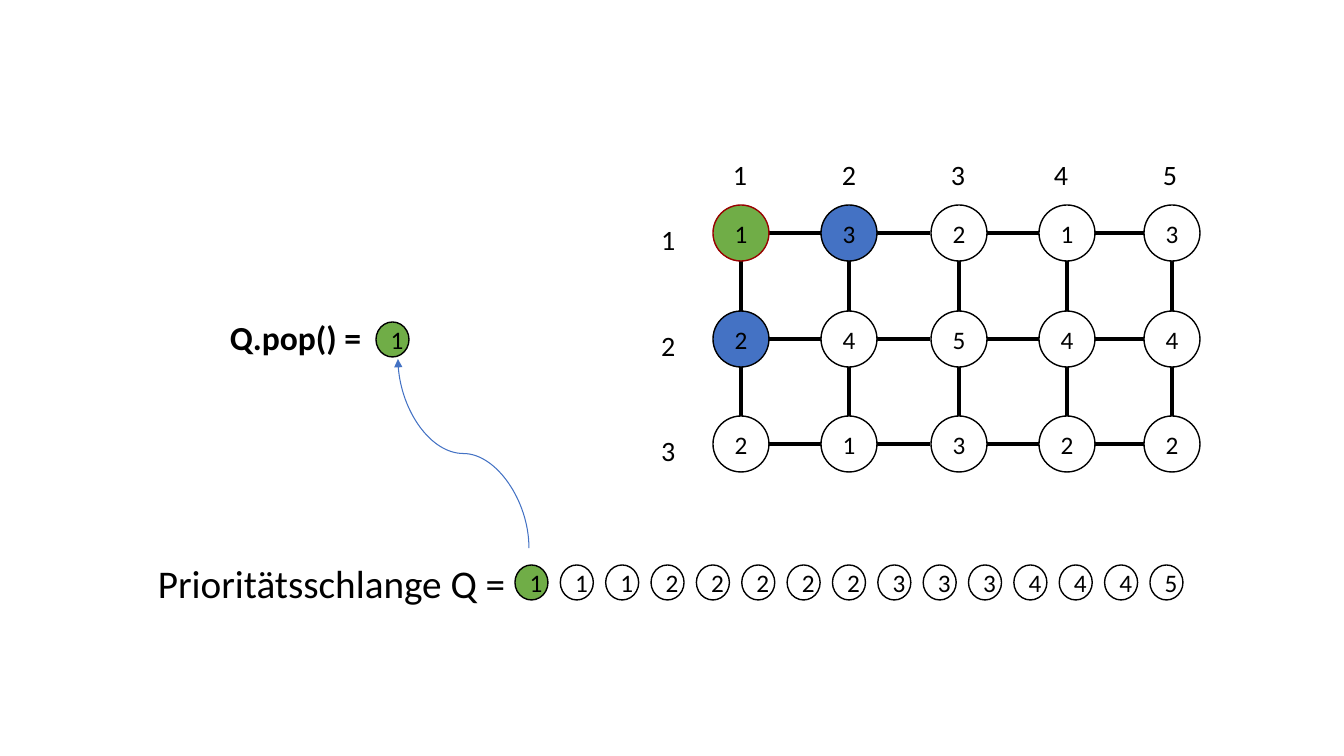
from lxml.etree import SubElement
from pptx import Presentation
from pptx.dml.color import RGBColor
from pptx.enum.shapes import MSO_CONNECTOR, MSO_SHAPE
from pptx.enum.text import MSO_ANCHOR, PP_ALIGN
from pptx.oxml.ns import qn
from pptx.util import Emu, Pt

SCALE = 914400 / 100.8
FONT = "Calibri"
COLORS = {
    "black": "000000",
    "white": "FFFFFF",
    "green": "70AD47",
    "blue": "4472C4",
    "red": "980000",
}
GRID = [[1, 3, 2, 1, 3], [2, 4, 5, 4, 4], [2, 1, 3, 2, 2]]
GRID_COLORS = {(0, 0): "green", (0, 1): "blue", (1, 0): "blue"}
COLUMN_CENTERS = [28, 136, 246, 354, 459]
ROW_CENTERS = [28, 134, 239]
NODE = 56
TOKEN_WIDTH, TOKEN_HEIGHT = 33, 35


def px(length):
    return Emu(round(length * SCALE))


def color(name):
    return RGBColor.from_string(COLORS[name])


def add_filled(page, kind, left, top, width, height, fill, line="black"):
    shape = page.shapes.add_shape(kind, px(left), px(top), px(width), px(height))
    shape.shadow.inherit = False
    shape.fill.solid()
    shape.fill.fore_color.rgb = color(fill)
    shape.line.color.rgb = color(line)
    shape.line.width = Pt(1)
    return shape


def set_text(frame, text, size, bold=False):
    frame.word_wrap = True
    para = frame.paragraphs[0]
    para.text = text
    para.font.name = FONT
    para.font.size = Pt(size)
    para.font.bold = bold
    para.font.color.rgb = color("black")
    return para


def add_circle(page, left, top, width, height, value, fill="white", line="black"):
    circle = add_filled(page, MSO_SHAPE.OVAL, left, top, width, height, fill, line)
    circle.text_frame.vertical_anchor = MSO_ANCHOR.MIDDLE
    set_text(circle.text_frame, str(value), 18).alignment = PP_ALIGN.CENTER


def add_label(page, left, top, width, height, text, size, bold=False):
    box = page.shapes.add_textbox(px(left), px(top), px(width), px(height))
    set_text(box.text_frame, text, size, bold)
    return box.text_frame


def add_edge(page, center_x, center_y, rotation=0):
    width, height = 70, 14
    edge = add_filled(page, MSO_SHAPE.MATH_MINUS, center_x - width / 2,
                      center_y - height / 2, width, height, "black")
    edge.adjustments[0] = 0.235
    edge.rotation = rotation


def add_grid(page, left, top):
    columns = [left + center for center in COLUMN_CENTERS]
    rows = [top + center for center in ROW_CENTERS]
    for y in rows:
        for start, end in zip(columns, columns[1:]):
            add_edge(page, (start + end) / 2, y)
    for x in columns:
        for start, end in zip(rows, rows[1:]):
            add_edge(page, x, (start + end) / 2, 90)
    for row, (y, values) in enumerate(zip(rows, GRID)):
        for column, (x, value) in enumerate(zip(columns, values)):
            fill = GRID_COLORS.get((row, column), "white")
            line = "red" if fill == "green" else "black"
            add_circle(page, x - NODE / 2, y - NODE / 2, NODE, NODE, value, fill, line)


def add_grid_labels(page, left, top):
    """Number the rows left of the grid and the columns above it."""
    for number, center in enumerate(ROW_CENTERS, 1):
        label = add_label(page, left - 75, top + center - 15, 56, 44, str(number), 20)
        label.margin_left = px(23)
    numbers = "\t".join(str(number) for number in range(1, 6))
    header = add_label(page, left + 10, top - 52, 475, 44, numbers, 20)
    properties = header.paragraphs[0]._p.get_or_add_pPr()
    stops = SubElement(properties, qn("a:tabLst"))
    for stop in (109, 218, 321, 430):
        SubElement(stops, qn("a:tab"), pos=str(px(stop)), algn="l")
    properties.insert(0, stops)


def add_queue(page, left, top, width):
    add_label(page, left, top, 372, 57, "Prioritätsschlange Q =", 28)
    first = left + 367
    values = sorted(value for row in GRID for value in row)
    pitch = (left + width - TOKEN_WIDTH - first) / (len(values) - 1)
    for index, value in enumerate(values):
        add_circle(page, first + index * pitch, top + 11, TOKEN_WIDTH, TOKEN_HEIGHT,
                   value, "white" if index else "green")


def add_pop(page, left, top):
    add_label(page, left, top, 172, 50, "Q.pop() =", 24, bold=True)
    add_circle(page, left + 156, top + 10, TOKEN_WIDTH, TOKEN_HEIGHT, 1, "green")


def add_pop_arrow(page, start_x, start_y, end_x, end_y):
    """Curve that leaves and arrives vertically: a level one turned by 90 degrees."""
    center_x, center_y = (start_x + end_x) / 2, (start_y + end_y) / 2
    half_length, half_width = (start_y - end_y) / 2, (start_x - end_x) / 2
    arrow = page.shapes.add_connector(
        MSO_CONNECTOR.CURVE,
        px(center_x + half_length), px(center_y - half_width),
        px(center_x - half_length), px(center_y + half_width))
    arrow.line.color.rgb = color("blue")
    arrow.line.width = Pt(0.75)
    SubElement(arrow.line._get_or_add_ln(), qn("a:tailEnd"), type="triangle")
    properties = arrow._element.spPr
    properties.find(qn("a:xfrm")).set("rot", str(90 * 60000))
    SubElement(properties, qn("a:effectLst"))


def main():
    deck = Presentation()
    deck.slide_width, deck.slide_height = px(1344), px(756)
    page = deck.slides.add_slide(deck.slide_layouts[6])
    add_grid(page, 713, 205)
    add_grid_labels(page, 713, 205)
    add_queue(page, 148, 554, 1035)
    add_pop(page, 220, 312)
    add_pop_arrow(page, 529, 548, 398, 359)
    deck.save("out.pptx")


if __name__ == "__main__":
    main()
